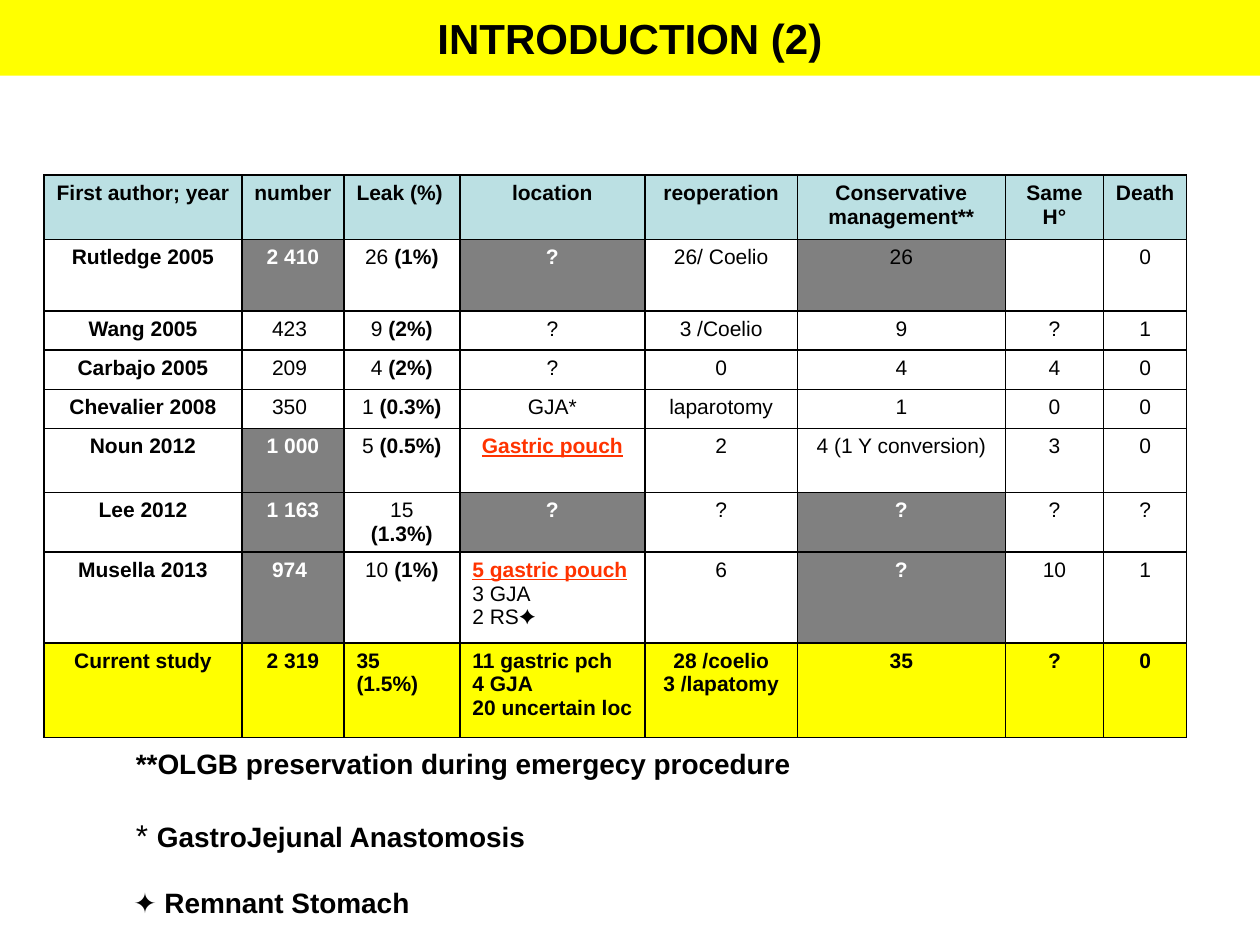
from pptx import Presentation
from pptx.util import Inches, Pt
from pptx.dml.color import RGBColor
from pptx.enum.text import PP_ALIGN as Align, MSO_ANCHOR as Anchor
from pptx.oxml import parse_xml
from pptx.oxml.ns import nsdecls

HUES = {"ink": "000000", "white": "FFFFFF", "head": "BBE0E3",
        "gray": "808080", "gold": "FFFF00", "red": "FF3300"}
TITLE = "INTRODUCTION (2)"
ROWS = [
    ["First author; year", "number", "Leak (%)", "location", "reoperation",
     "Conservative management**", "Same H°", "Death"],
    ["Rutledge 2005", "2 410", "26 (1%)", "?", "26/ Coelio", "26", "", "0"],
    ["Wang 2005", "423", "9 (2%)", "?", "3 /Coelio", "9", "?", "1"],
    ["Carbajo 2005", "209", "4 (2%)", "?", "0", "4", "4", "0"],
    ["Chevalier 2008", "350", "1 (0.3%)", "GJA*", "laparotomy", "1", "0", "0"],
    ["Noun 2012", "1 000", "5 (0.5%)", "Gastric pouch", "2",
     "4 (1 Y conversion)", "3", "0"],
    ["Lee 2012", "1 163", "15 (1.3%)", "?", "?", "?", "?", "?"],
    ["Musella 2013", "974", "10 (1%)", "5 gastric pouch\n3 GJA\n2 RS✦", "6",
     "?", "10", "1"],
    ["Current study", "2 319", "35 (1.5%)",
     "11 gastric pch\n4 GJA\n20 uncertain loc", "28 /coelio\n3 /lapatomy",
     "35", "?", "0"],
]
WIDTHS = [1.57, 0.81, 0.92, 1.47, 1.21, 1.65, 0.78, 0.66]
HEIGHTS = [0.51, 0.57, 0.31, 0.31, 0.31, 0.51, 0.47, 0.72, 0.75]
LAST = len(ROWS) - 1
GRAY = {(1, 1), (1, 3), (1, 5), (5, 1), (6, 1), (6, 3), (6, 5), (7, 1), (7, 5)}
PLAIN = {(1, 5)}
LEFT = {(0, 2), (7, 3), (8, 2), (8, 3)}
INDENT = {(2, 1), (3, 1), (4, 1), (7, 1)}
RED = {"Gastric pouch", "5 gastric pouch"}
NOTES = [
    (0.98, 5.88, 6.46, 0.37, [("**OLGB preservation during emergecy procedure", 16, True)]),
    (0.98, 6.43, 3.78, 0.4, [("* ", 18, False), ("GastroJejunal Anastomosis", 16, True)]),
    (0.96, 6.98, 4.35, 0.37, [("✦ ", 16, False), ("Remnant Stomach", 16, True)]),
]


def color(name):
    return RGBColor.from_string(HUES[name])


def style(font, size, bold, hue="ink"):
    font.name, font.size, font.bold = "Arial", Pt(size), bold
    font.color.rgb = color(hue)


def paint(part, hue):
    part.fill.solid()
    part.fill.fore_color.rgb = color(hue)


def edge(cell):
    props = cell._tc.get_or_add_tcPr()
    for spot, side in enumerate("LRTB"):
        props.insert(spot, parse_xml(
            f'<a:ln{side} {nsdecls("a")} w="12700"><a:solidFill>'
            f'<a:srgbClr val="{HUES["ink"]}"/></a:solidFill></a:ln{side}>'))


def split(text, row, col):
    if col == 2 and 0 < row < LAST:
        count, share = text.split(" ")
        return [count + " ", share]
    if text.endswith("✦"):
        return [text[:-1], "✦"]
    return [text]


def write(cell, text, row, col):
    spot = (row, col)
    dark = spot in GRAY and spot not in PLAIN
    strong = row in (0, LAST) or col == 0 or dark
    if spot in INDENT:
        cell.margin_left = Inches(0.24)
    elif row == 0 and spot not in LEFT:
        cell.margin_left = cell.margin_right = Inches(0.06)
    frame = cell.text_frame
    for i, line in enumerate(text.split("\n")):
        para = frame.add_paragraph() if i else frame.paragraphs[0]
        para.alignment = Align.LEFT if spot in LEFT | INDENT else Align.CENTER
        red = line in RED
        hue = "red" if red else "white" if dark else "ink"
        style(para.font, 12, strong or red, hue)
        for bit in split(line, row, col):
            run = para.add_run()
            run.text = bit
            style(run.font, 12, strong or red or bit.startswith("("), hue)
            if red:
                run.font.underline = True
            if bit == "✦":
                run.font.name = "Times New Roman"


def add_grid(slide):
    grid = slide.shapes.add_table(
        len(ROWS), len(WIDTHS), Inches(0.35), Inches(1.39),
        Inches(sum(WIDTHS)), Inches(sum(HEIGHTS))).table
    for col, width in zip(grid.columns, WIDTHS):
        col.width = Inches(width)
    for row, height in zip(grid.rows, HEIGHTS):
        row.height = Inches(height)
    bands = {0: "head", LAST: "gold"}
    for r, texts in enumerate(ROWS):
        for c, text in enumerate(texts):
            cell = grid.cell(r, c)
            paint(cell, "gray" if (r, c) in GRAY else bands.get(r, "white"))
            edge(cell)
            write(cell, text, r, c)


def add_note(slide, x, y, w, h, runs):
    box = slide.shapes.add_textbox(*map(Inches, (x, y, w, h)))
    box.text_frame.word_wrap = True
    para = box.text_frame.paragraphs[0]
    for text, size, bold in runs:
        run = para.add_run()
        run.text = text
        style(run.font, size, bold)


def main():
    deck = Presentation()
    deck.slide_width, deck.slide_height = Inches(10), Inches(7.5)
    slide = deck.slides.add_slide(deck.slide_layouts[5])
    title = slide.shapes.title
    title.left, title.top = Inches(0), Inches(0)
    title.width, title.height = Inches(10), Inches(0.6)
    paint(title, "gold")
    title.text_frame.text = TITLE
    title.text_frame.vertical_anchor = Anchor.MIDDLE
    head = title.text_frame.paragraphs[0]
    head.alignment = Align.CENTER
    style(head.font, 24, True)
    add_grid(slide)
    for note in NOTES:
        add_note(slide, *note)
    deck.save("out.pptx")


if __name__ == "__main__":
    main()
